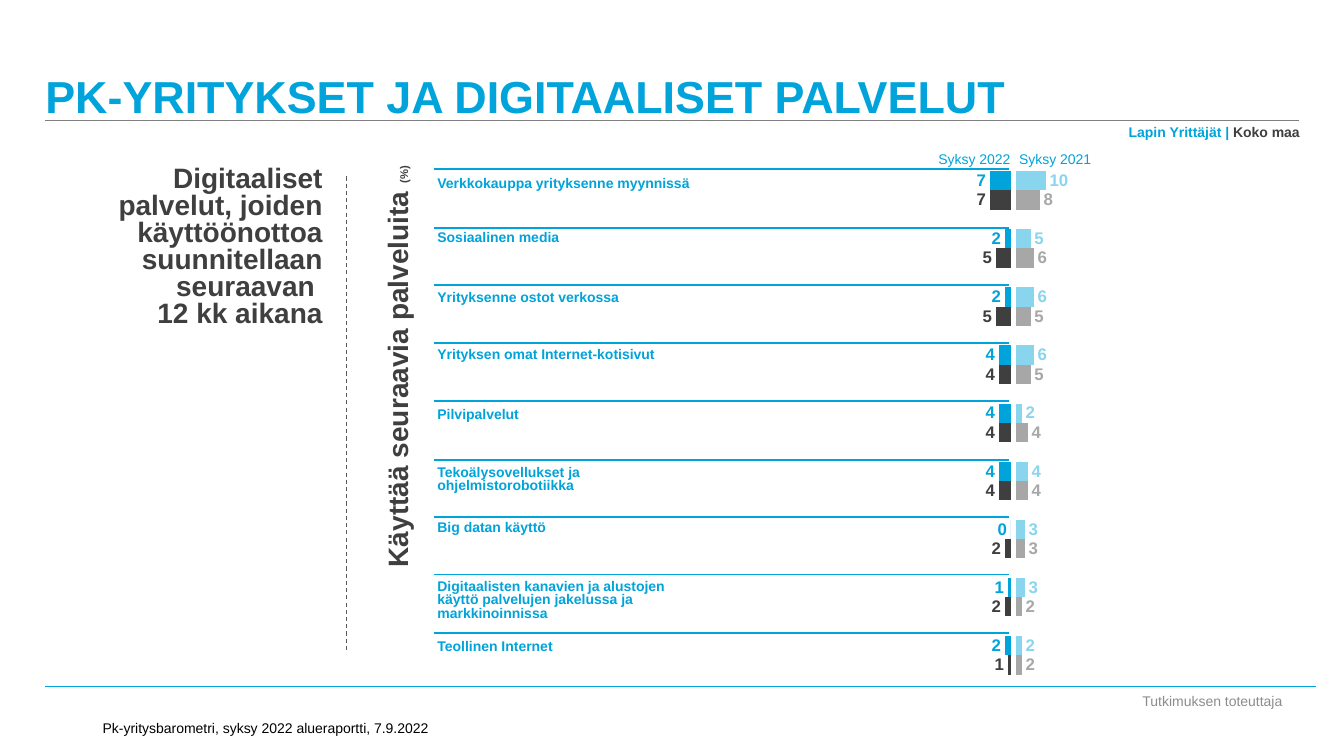
from lxml import etree
from pptx import Presentation
from pptx.chart.data import CategoryChartData
from pptx.dml.color import RGBColor
from pptx.enum.chart import XL_CHART_TYPE as CT, XL_LABEL_POSITION as LP
from pptx.enum.dml import MSO_LINE
from pptx.enum.shapes import MSO_CONNECTOR
from pptx.enum.text import MSO_ANCHOR as ANCHOR, MSO_AUTO_SIZE, PP_ALIGN as AL
from pptx.oxml.ns import qn
from pptx.util import Emu, Pt

PX = 9144
FONT = "Arial"
BLUE = RGBColor(0x00, 0xA3, 0xDA)
PALE_BLUE = RGBColor(0x8A, 0xD5, 0xEE)
DARK = RGBColor(0x3F, 0x3F, 0x3F)
PALE_GREY = RGBColor(0xA7, 0xA7, 0xA7)
RULE_GREY = RGBColor(0x7F, 0x7F, 0x7F)
DASH_GREY = RGBColor(0x59, 0x59, 0x59)
FOOT_GREY = RGBColor(0x8C, 0x8C, 0x8C)
BLACK = RGBColor(0, 0, 0)

TITLE = "PK-YRITYKSET JA DIGITAALISET PALVELUT"
SERVICES = [
    ("Verkkokauppa yrityksenne myynnissä", 171, 24),
    ("Sosiaalinen media", 225, 24),
    ("Yrityksenne ostot verkossa", 285, 24),
    ("Yrityksen omat Internet-kotisivut", 341, 24),
    ("Pilvipalvelut", 401, 24),
    ("Tekoälysovellukset ja \nohjelmistorobotiikka", 458, 37),
    ("Big datan käyttö", 513, 24),
    ("Digitaalisten kanavien ja alustojen \n"
     "käyttö palvelujen jakelussa ja markkinoinnissa", 571, 50),
    ("Teollinen Internet", 631, 24),
]
CHARTS = [
    (699, True, [(BLUE, (7, 2, 2, 4, 4, 4, 0, 1, 2)),
                 (DARK, (7, 5, 5, 4, 4, 4, 2, 2, 1))]),
    (1001, False, [(PALE_BLUE, (10, 5, 6, 6, 2, 4, 3, 3, 2)),
                   (PALE_GREY, (8, 6, 5, 5, 4, 4, 3, 2, 2))]),
]
PLOT = {"layoutTarget": "inner", "xMode": "edge", "yMode": "edge",
        "x": 0.02, "y": 0.03, "w": 0.95, "h": 0.97}
TEXTS = [
    ((92, 700, 417, 35), [("Pk-yritysbarometri, syksy 2022 alueraportti, 7.9.2022", 10, BLACK, False)],
     AL.LEFT, ANCHOR.BOTTOM, 1, 0),
    ((1116, 682, 173, 26), [("Tutkimuksen toteuttaja", 10, FOOT_GREY, False)],
     AL.CENTER, ANCHOR.MIDDLE, 1, 0),
    ((151, 376, 486, 44), [("Käyttää seuraavia palveluita ", 20, DARK, True), ("(%)", 8, DARK, True)],
     AL.RIGHT, ANCHOR.TOP, 1, 270),
    ((813, 118, 486, 27), [("Lapin Yrittäjät | ", 10, BLUE, True), ("Koko maa", 10, DARK, True)],
     AL.RIGHT, ANCHOR.TOP, 1, 0),
    ((43, 161, 287, 172),
     [("Digitaaliset palvelut, joiden käyttöönottoa suunnitellaan\nseuraavan \n12 kk aikana", 20, DARK, True)],
     AL.RIGHT, ANCHOR.TOP, 0.8, 0),
    ((1001, 144, 103, 27), [("Syksy 2021", 10, BLUE, False)], AL.LEFT, ANCHOR.TOP, 1, 0),
    ((909, 144, 103, 27), [("Syksy 2022", 10, BLUE, False)], AL.RIGHT, ANCHOR.TOP, 1, 0),
]
TEXTS += [((424, top, 319, h), [(name, 10, BLUE, True)], AL.LEFT, ANCHOR.TOP, 0.8, 0)
          for name, top, h in SERVICES]
LINES = [
    (45, 120, 1288, 120, RULE_GREY, 0.75, None),
    (45, 681, 1305, 681, BLUE, 0.75, None),
    (344, 175, 344, 647, DASH_GREY, 0.75, MSO_LINE.DASH),
]
LINES += [(430, y, 1001, y, BLUE, 1.25, None)
          for y in (round(168 + 57.5 * i) for i in range(len(SERVICES)))]


def emu(*px):
    return [Emu(v * PX) for v in px]


def set_font(font, size, color, bold=False):
    for key, value in {"name": FONT, "size": Pt(size), "bold": bold}.items():
        setattr(font, key, value)
    font.color.rgb = color


def write(tf, runs, align, anchor, spacing):
    for key, value in {"word_wrap": True, "vertical_anchor": anchor,
                       "auto_size": MSO_AUTO_SIZE.NONE}.items():
        setattr(tf, key, value)
    p = tf.paragraphs[0]
    p.alignment, p.line_spacing = align, spacing
    for text, size, color, bold in runs:
        for i, part in enumerate(text.split("\n")):
            if i:
                p.add_line_break()
            r = p.add_run()
            r.text = part
            set_font(r.font, size, color, bold)


def add_bars(shapes, left, mirrored, rows):
    data = CategoryChartData(number_format="#,##0")
    data.categories = [str(i + 1) for i in range(len(SERVICES))]
    for i, (_, values) in enumerate(rows, 1):
        data.add_series(f"Series {i}", values)
    chart = shapes.add_chart(CT.BAR_CLUSTERED, *emu(left, 144, 313, 535), data).chart
    chart.has_title = chart.has_legend = False
    set_font(chart.font, 20, BLACK)
    cat, val = chart.category_axis, chart.value_axis
    cat.reverse_order, val.reverse_order = True, mirrored
    val.minimum_scale, val.maximum_scale = 0, 100
    for axis in (cat, val):
        axis.has_major_gridlines = axis.visible = False
    plot = chart.plots[0]
    plot.gap_width, plot.overlap, plot.vary_by_categories = 101, 0, False
    for series, (color, _) in zip(plot.series, rows):
        series.invert_if_negative = False
        series.format.fill.solid()
        series.format.fill.fore_color.rgb = color
        labels = series.data_labels
        for key, value in {"show_value": True, "position": LP.OUTSIDE_END,
                           "number_format": "#,##0", "number_format_is_linked": False}.items():
            setattr(labels, key, value)
        set_font(labels.font, 12, color, True)
    area = chart.element.find(".//" + qn("c:plotArea"))
    for old in area.findall(qn("c:layout")):
        area.remove(old)
    layout = etree.Element(qn("c:layout"))
    manual = etree.SubElement(layout, qn("c:manualLayout"))
    for key, value in PLOT.items():
        etree.SubElement(manual, qn("c:" + key)).set("val", str(value))
    area.insert(0, layout)


def add_line(shapes, x1, y1, x2, y2, color, width, dash):
    s = shapes.add_connector(MSO_CONNECTOR.STRAIGHT, *emu(x1, y1, x2, y2))
    s.line.color.rgb, s.line.width = color, Pt(width)
    if dash:
        s.line.dash_style = dash
    etree.SubElement(s.element.spPr, qn("a:effectLst"))


def main():
    prs = Presentation()
    prs.slide_width, prs.slide_height = emu(1333, 750)
    slide = prs.slides.add_slide(prs.slide_layouts[5])
    shapes = slide.shapes
    title = shapes.title
    title.left, title.top, title.width, title.height = emu(45, 0, 1230, 122)
    tf = title.text_frame
    for side in ("left", "top", "right", "bottom"):
        setattr(tf, "margin_" + side, 0)
    write(tf, [(TITLE, 32, BLUE, True)], AL.LEFT, ANCHOR.BOTTOM, 1)
    for bars in CHARTS:
        add_bars(shapes, *bars)
    for line in LINES:
        add_line(shapes, *line)
    for box, runs, align, anchor, spacing, turn in TEXTS:
        s = shapes.add_textbox(*emu(*box))
        s.rotation = turn
        write(s.text_frame, runs, align, anchor, spacing)
    prs.save("out.pptx")


if __name__ == "__main__":
    main()
